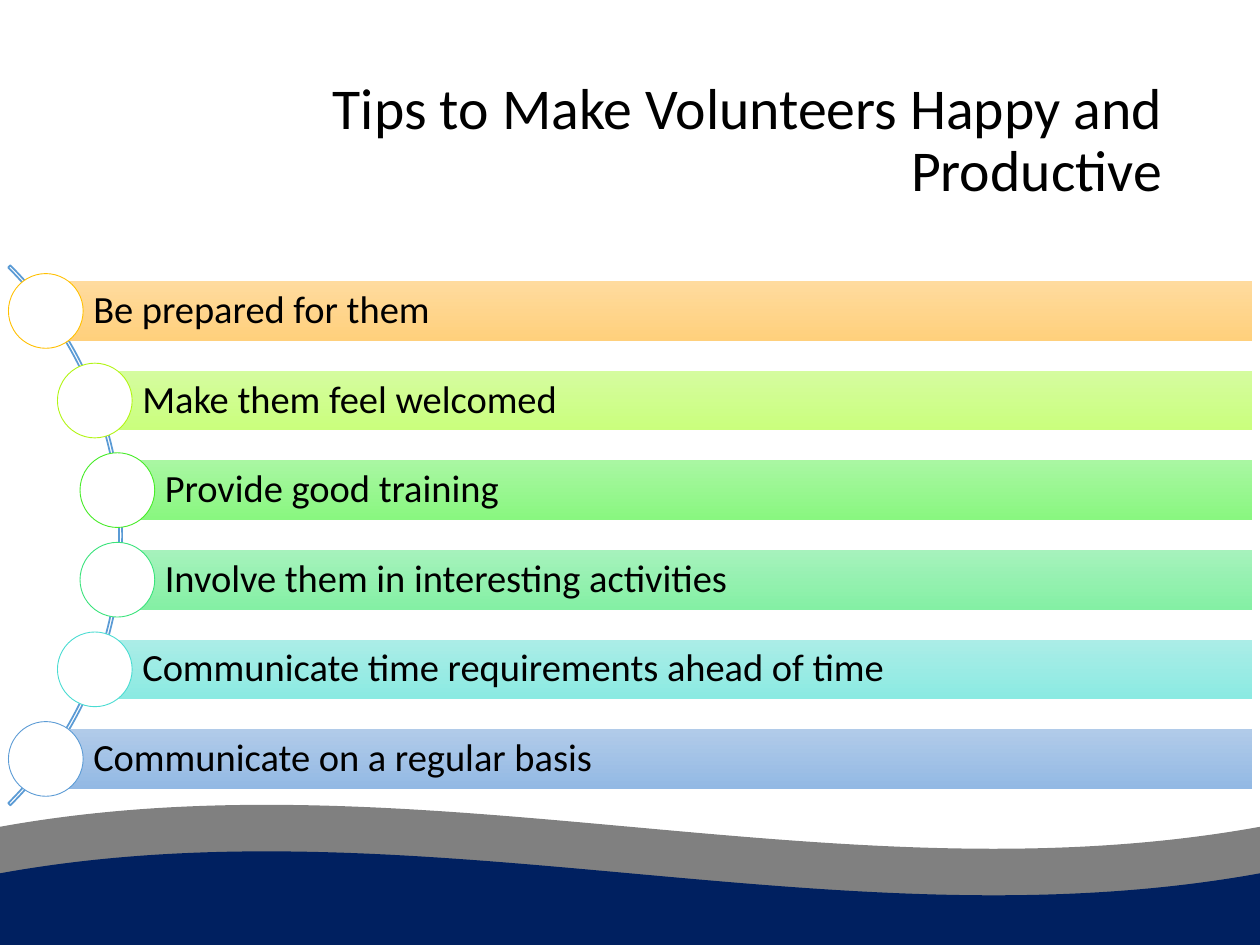
from pptx import Presentation
from pptx.dml.color import RGBColor
from pptx.enum.shapes import MSO_SHAPE
from pptx.enum.text import MSO_ANCHOR, PP_ALIGN
from pptx.util import Pt

ARC, CIRCLE = MSO_SHAPE.BLOCK_ARC, MSO_SHAPE.OVAL
BAR, WAVE = MSO_SHAPE.RECTANGLE, MSO_SHAPE.WAVE
MIDDLE = MSO_ANCHOR.MIDDLE
LEFT, RIGHT = PP_ALIGN.LEFT, PP_ALIGN.RIGHT

FONT = "Calibri"
BLACK = RGBColor(0, 0, 0)
WHITE = RGBColor(255, 255, 255)
GRAY = RGBColor(0x80, 0x80, 0x80)
NAVY = RGBColor(0x00, 0x20, 0x60)
BLUE = RGBColor(0x5B, 0x9B, 0xD5)

# Text, bar left, gradient top, gradient bottom, circle outline
TIPS = [
    ("Be prepared for them", 26.2,
     RGBColor(0xFF, 0xDB, 0x9E), RGBColor(0xFF, 0xD0, 0x7C), RGBColor(0xFF, 0xC0, 0x00)),
    ("Make them feel welcomed", 54.2,
     RGBColor(0xD5, 0xFC, 0x9F), RGBColor(0xCA, 0xFF, 0x7D), RGBColor(0xB2, 0xF5, 0x14)),
    ("Provide good training", 67.1,
     RGBColor(0xA9, 0xF7, 0xA2), RGBColor(0x89, 0xF7, 0x80), RGBColor(0x46, 0xEC, 0x27)),
    ("Involve them in interesting activities", 67.1,
     RGBColor(0xA6, 0xF2, 0xBC), RGBColor(0x84, 0xF0, 0xA4), RGBColor(0x39, 0xE3, 0x7B)),
    ("Communicate time requirements ahead of time", 54.2,
     RGBColor(0xAB, 0xED, 0xE7), RGBColor(0x8B, 0xEA, 0xE2), RGBColor(0x4A, 0xDC, 0xD2)),
    ("Communicate on a regular basis", 26.2,
     RGBColor(0xB1, 0xCB, 0xE9), RGBColor(0x93, 0xB9, 0xE4), BLUE),
]
BAR_RIGHT = 715.5
BAR_HEIGHT = 34.1
FIRST_CENTER = 177.7
ROW_STEP = 51.2
CIRCLE_SIZE = 42.7


def add_shape(page, kind, left, top, width, height, fill=None, line=None, weight=1):
    shape = page.shapes.add_shape(kind, Pt(left), Pt(top), Pt(width), Pt(height))
    shape.shadow.inherit = False
    if fill is None:
        shape.fill.background()
    else:
        shape.fill.solid()
        shape.fill.fore_color.rgb = fill
    if line is None:
        shape.line.fill.background()
    else:
        shape.line.color.rgb = line
        shape.line.width = Pt(weight)
    return shape


def write_text(box, text, size, align):
    frame = box.text_frame
    frame.word_wrap = True
    frame.vertical_anchor = MIDDLE
    para = frame.paragraphs[0]
    para.alignment = align
    para.line_spacing = 0.9
    span = para.add_run()
    span.text = text
    span.font.name = FONT
    span.font.size = Pt(size)
    span.font.color.rgb = BLACK


def add_title(page, text):
    box = page.shapes.add_textbox(Pt(157.7), Pt(28.8), Pt(513.4), Pt(104.4))
    write_text(box, text, 33, RIGHT)


def add_waves(page):
    for top, color in ((459.4, GRAY), (486, NAVY)):
        add_shape(page, WAVE, 0, top, 720, 104.4, color)


def add_arc(page):
    """Draw the thin curve that the circles sit on."""
    arc = add_shape(page, ARC, -366.5, 87.8, 436.3, 436.3, line=BLUE)
    for index, value in enumerate((189, 27, 0.004)):
        arc.adjustments[index] = value


def add_tip(page, center, text, left, top_color, bottom_color, outline):
    bar = add_shape(page, BAR, left, center - BAR_HEIGHT / 2, BAR_RIGHT - left, BAR_HEIGHT)
    bar.fill.gradient()
    bar.fill.gradient_angle = 270
    for stop, position, color in zip(bar.fill.gradient_stops, (0, 1), (top_color, bottom_color)):
        stop.position = position
        stop.color.rgb = color
    frame = bar.text_frame
    frame.margin_left = Pt(27.1)
    frame.margin_top = frame.margin_right = frame.margin_bottom = Pt(4.4)
    write_text(bar, text, 22, LEFT)

    radius = CIRCLE_SIZE / 2
    add_shape(page, CIRCLE, left - radius, center - radius, CIRCLE_SIZE, CIRCLE_SIZE,
              WHITE, outline, 0.5)


def main():
    deck = Presentation()
    deck.slide_width, deck.slide_height = Pt(720), Pt(540)
    page = deck.slides.add_slide(deck.slide_layouts[6])
    add_waves(page)
    add_title(page, "Tips to Make Volunteers Happy and Productive")
    add_arc(page)
    for row, tip in enumerate(TIPS):
        add_tip(page, FIRST_CENTER + row * ROW_STEP, *tip)
    deck.save("out.pptx")


if __name__ == "__main__":
    main()
